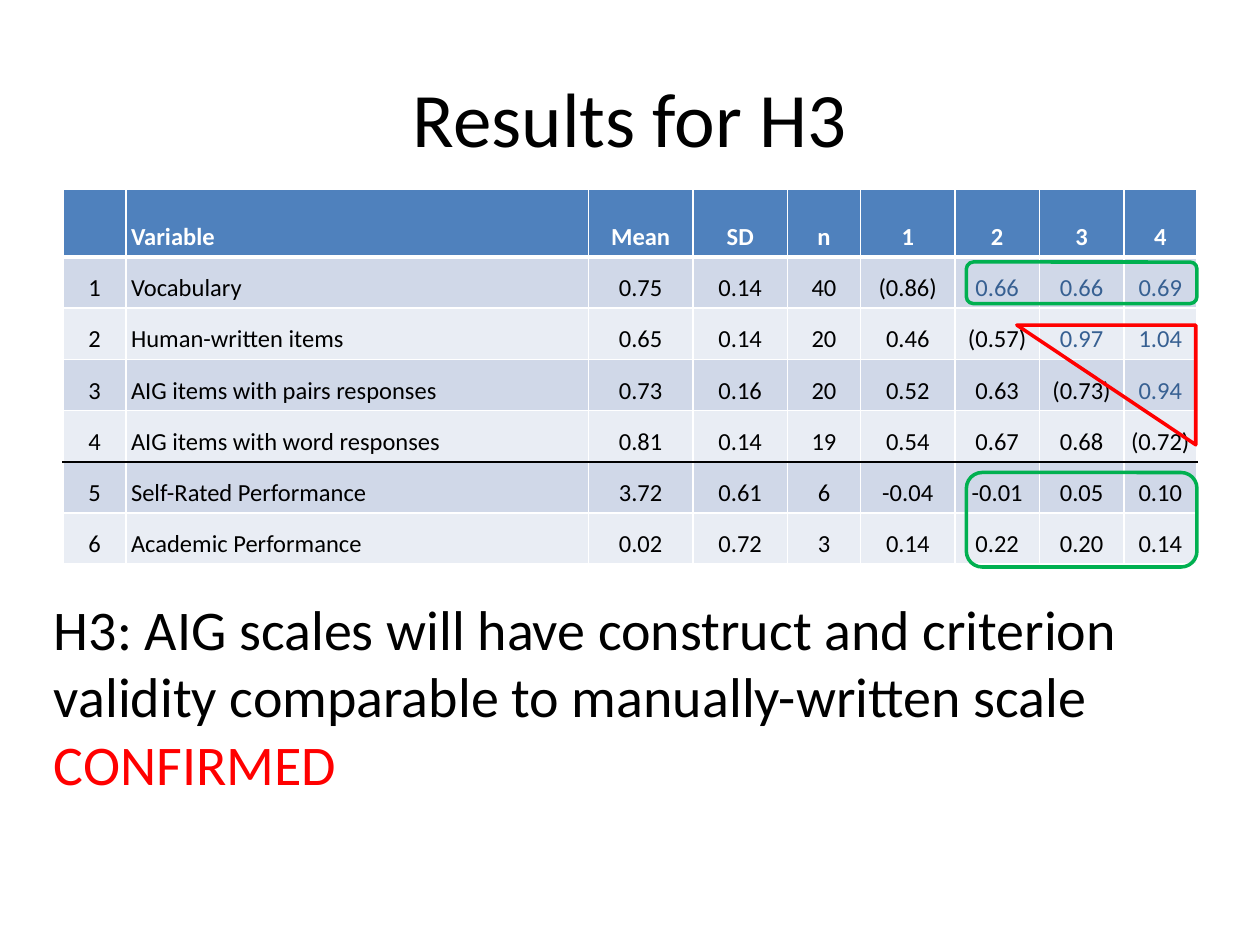
from lxml import etree
from pptx import Presentation
from pptx.dml.color import RGBColor
from pptx.enum import shapes, text
from pptx.oxml import ns
from pptx.util import Inches, Pt

BLACK = RGBColor(0x00, 0x00, 0x00)
WHITE = RGBColor(0xFF, 0xFF, 0xFF)
HEADER_BLUE = RGBColor(0x4F, 0x81, 0xBD)
BAND_DARK = RGBColor(0xD0, 0xD8, 0xE8)
BAND_LIGHT = RGBColor(0xE9, 0xED, 0xF4)
VALUE_BLUE = RGBColor(0x37, 0x60, 0x92)
GREEN = RGBColor(0x00, 0xB0, 0x50)
RED = RGBColor(0xFF, 0x00, 0x00)


def set_font(font, size, color, bold=False):
    values = {"name": "Calibri", "size": Pt(size), "bold": bold}
    for name, value in values.items():
        setattr(font, name, value)
    font.color.rgb = color


def set_border(cell, side, color, width):
    line = etree.SubElement(cell._tc.get_or_add_tcPr(), ns.qn("a:ln" + side), w=str(Pt(width)))
    fill = etree.SubElement(line, ns.qn("a:solidFill"))
    etree.SubElement(fill, ns.qn("a:srgbClr"), val=str(color))


presentation = Presentation()
presentation.slide_width, presentation.slide_height = Inches(10), Inches(7.5)
slide = presentation.slides.add_slide(presentation.slide_layouts[5])

# Title
title = slide.shapes.title
title.left, title.top, title.width, title.height = [Inches(n) for n in (0.5, 0.3, 9, 1.25)]
title.text_frame.text = "Results for H3"
title.text_frame.vertical_anchor = text.MSO_ANCHOR.MIDDLE
title.text_frame.paragraphs[0].alignment = text.PP_ALIGN.CENTER
set_font(title.text_frame.paragraphs[0].runs[0].font, 44, BLACK)

# Correlation table
rows = [
    ["", "Variable", "Mean", "SD", "n", "1", "2", "3", "4"],
    ["1", "Vocabulary", "0.75", "0.14", "40", "(0.86)", "0.66", "0.66", "0.69"],
    ["2", "Human-written items", "0.65", "0.14", "20", "0.46", "(0.57)", "0.97", "1.04"],
    ["3", "AIG items with pairs responses", "0.73", "0.16", "20", "0.52", "0.63", "(0.73)", "0.94"],
    ["4", "AIG items with word responses", "0.81", "0.14", "19", "0.54", "0.67", "0.68", "(0.72)"],
    ["5", "Self-Rated Performance", "3.72", "0.61", "6", "-0.04", "-0.01", "0.05", "0.10"],
    ["6", "Academic Performance", "0.02", "0.72", "3", "0.14", "0.22", "0.20", "0.14"],
]
column_widths = [0.5, 3.67, 0.83, 0.75, 0.58, 0.75, 0.67, 0.67, 0.58]
header_height, table_height = 0.54, 2.98
last_scale_row, first_value_column = 4, 5

table = slide.shapes.add_table(
    len(rows), len(column_widths), Inches(0.5), Inches(1.5), Inches(9), Inches(table_height)
).table
for column, width in zip(table.columns, column_widths):
    column.width = Inches(width)
for row in table.rows:
    row.height = Inches((table_height - header_height) / (len(rows) - 1))
table.rows[0].height = Inches(header_height)

for r, values in enumerate(rows):
    for c, value in enumerate(values):
        cell = table.cell(r, c)
        cell_format = {
            "vertical_anchor": text.MSO_ANCHOR.BOTTOM,
            "margin_left": Inches(0.04), "margin_right": Inches(0.04),
            "margin_top": Inches(0.04), "margin_bottom": Inches(0.04),
        }
        for name, setting in cell_format.items():
            setattr(cell, name, setting)

        # Heavy rule under the header, black rule under the scales
        top = (WHITE, 3 if r == 1 else 1)
        bottom = (WHITE, 3 if r == 0 else 1)
        if r == last_scale_row:
            bottom = (BLACK, 1)
        elif r == last_scale_row + 1:
            top = (BLACK, 1)
        for side, border in (("L", (WHITE, 1)), ("R", (WHITE, 1)), ("T", top), ("B", bottom)):
            set_border(cell, side, *border)

        cell.fill.solid()
        cell.fill.fore_color.rgb = HEADER_BLUE if r == 0 else BAND_DARK if r % 2 else BAND_LIGHT

        # Values above the diagonal are blue
        above_diagonal = 0 < r <= last_scale_row and c - first_value_column >= r
        color = WHITE if r == 0 else VALUE_BLUE if above_diagonal else BLACK
        paragraph = cell.text_frame.paragraphs[0]
        paragraph.alignment = text.PP_ALIGN.LEFT if c == 1 else text.PP_ALIGN.CENTER
        paragraph.space_after = Pt(5.8)
        if value:
            run = paragraph.add_run()
            run.text = value
            set_font(run.font, 14, color, bold=r == 0)

# Hypothesis and verdict
box = slide.shapes.add_textbox(Inches(0.33), Inches(4.67), Inches(9.17), Inches(2.02))
frame = box.text_frame
frame.word_wrap = True
statements = [
    ("H3: AIG scales will have construct and criterion validity comparable "
     "to manually-written scale", BLACK),
    ("CONFIRMED", RED),
]
for i, (statement, color) in enumerate(statements):
    paragraph = frame.add_paragraph() if i else frame.paragraphs[0]
    run = paragraph.add_run()
    run.text = statement
    set_font(run.font, 32, color)

# Highlights around groups of values; the triangle is turned to point down right
ROUNDED = shapes.MSO_SHAPE.ROUNDED_RECTANGLE
highlights = [
    (ROUNDED, (7.67, 2.08, 1.83, 0.33), GREEN, 0),
    (ROUNDED, (7.67, 3.75, 1.83, 0.75), GREEN, 0),
    (shapes.MSO_SHAPE.RIGHT_TRIANGLE, (8.07, 2.58, 1.42, 0.95), RED, 180),
]
for kind, place, color, rotation in highlights:
    shape = slide.shapes.add_shape(kind, *[Inches(n) for n in place])
    shape.rotation = rotation
    shape.shadow.inherit = False
    shape.fill.background()
    shape.line.color.rgb = color
    shape.line.width = Pt(2)

presentation.save("out.pptx")
